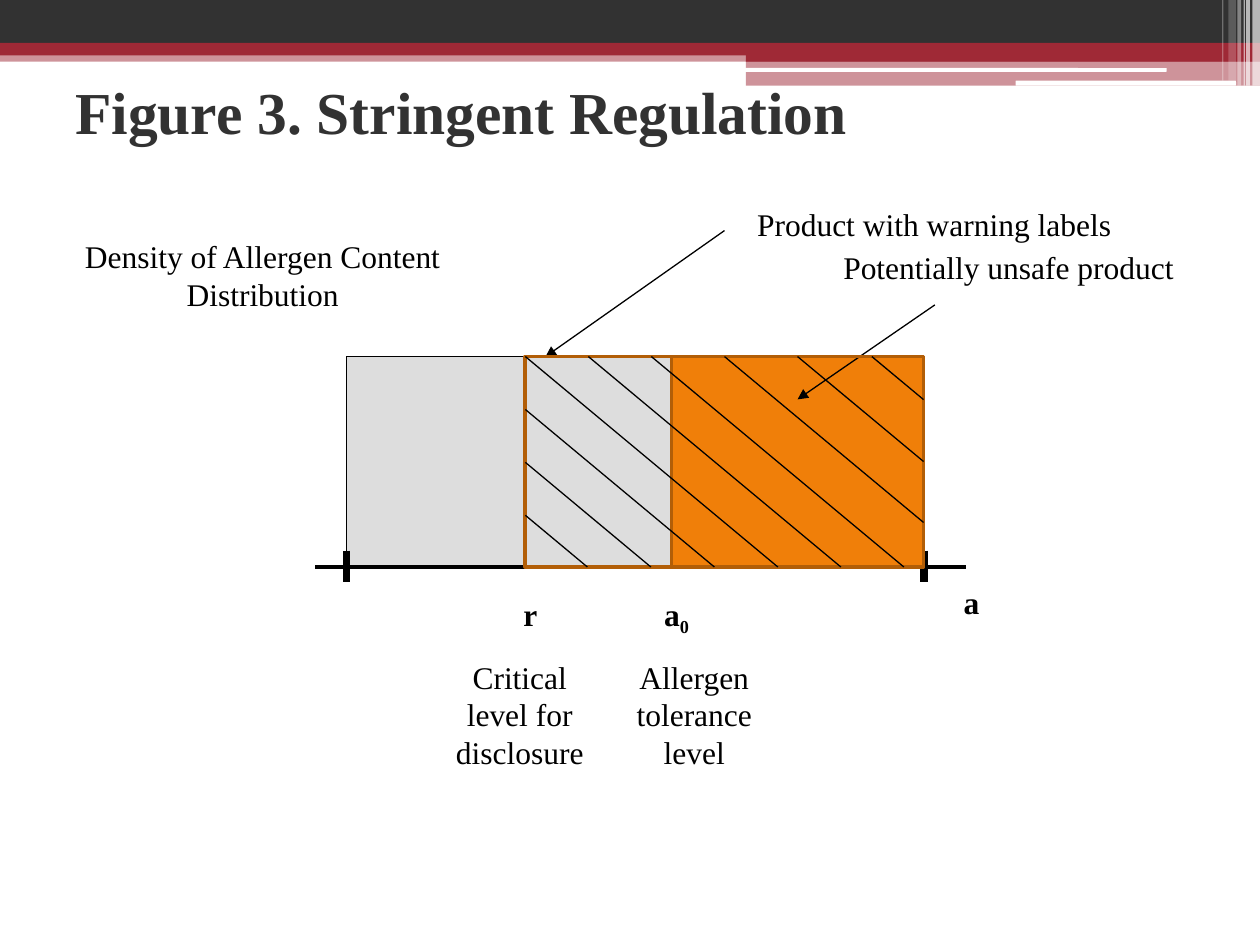
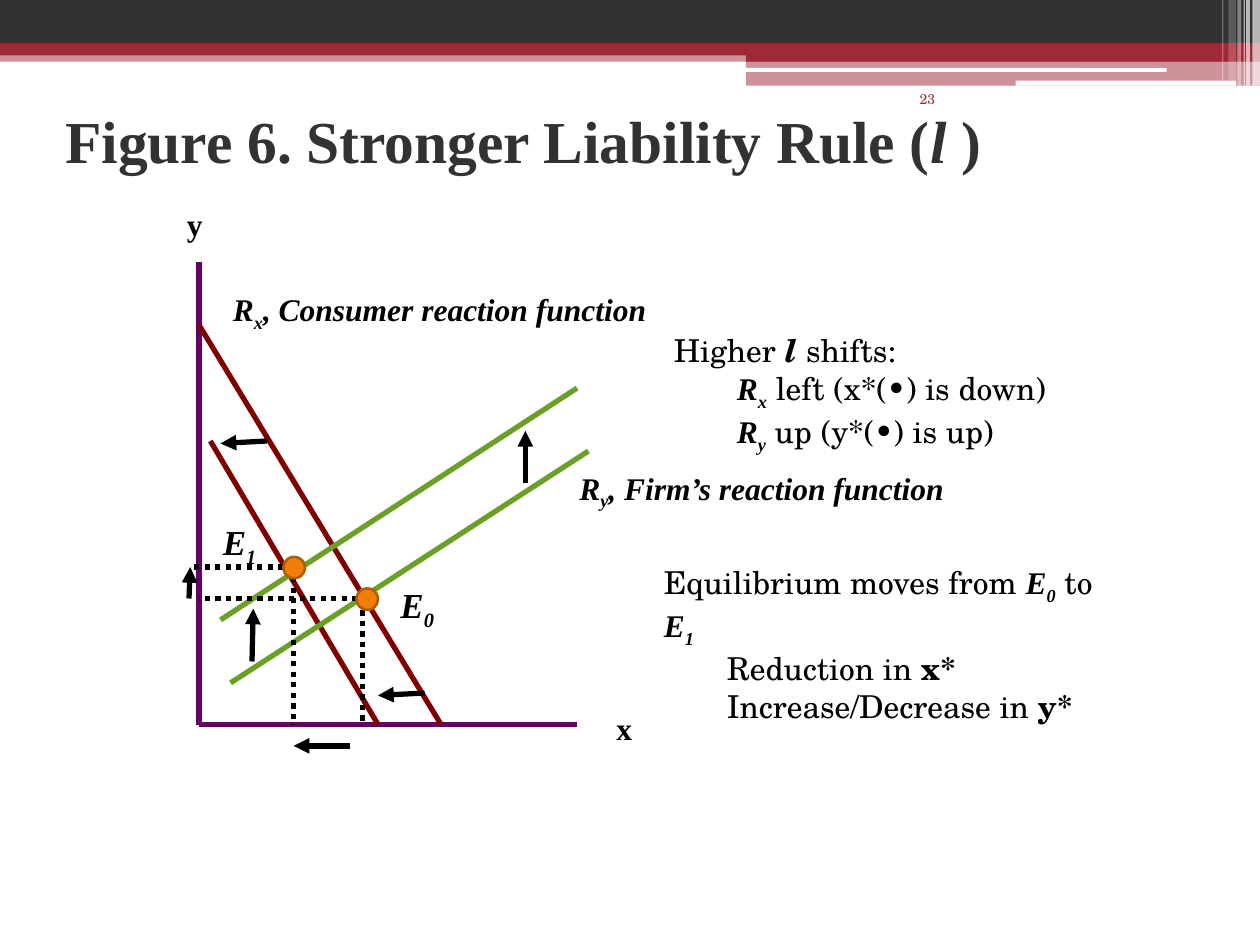
from lxml import etree
from pptx import Presentation
from pptx.dml.color import RGBColor
from pptx.enum.dml import MSO_LINE
from pptx.enum.shapes import MSO_CONNECTOR, MSO_SHAPE
from pptx.enum.text import MSO_ANCHOR, PP_ALIGN
from pptx.oxml.ns import qn
from pptx.util import Inches, Pt

RECTANGLE, ROUNDED, OVAL = MSO_SHAPE.RECTANGLE, MSO_SHAPE.ROUNDED_RECTANGLE, MSO_SHAPE.OVAL
STRAIGHT, DOTTED = MSO_CONNECTOR.STRAIGHT, MSO_LINE.ROUND_DOT
LEFT, CENTER = PP_ALIGN.LEFT, PP_ALIGN.CENTER
TITLE_ONLY = 5

SERIF, SCHOOLBOOK = "Times New Roman", "TeX Gyre Schola"
BLACK, WHITE, CHARCOAL, RED = "000000", "FFFFFF", "323232", "9F2936"
GRAY, ORANGE, BROWN = "DDDDDD", "F07F09", "B25E07"
PURPLE, MAROON, GREEN = "660066", "800000", "6B9F25"

# Header bands: left, top, width, height, colour, opacity in percent
BANDS = [
    (0, 0.4, 10, 0.09, RED, 50),
    (0, 0, 10, 0.34, CHARCOAL, 100),
    (0, 0.34, 10, 0.1, RED, 100),
    (5.92, 0.39, 4.08, 0.1, RED, 100),
    (5.92, 0.48, 4.08, 0.2, RED, 50),
]
HEADER_RULES = [(5.91, 0.54, 3.35, 0.03, WHITE, 100), (8.06, 0.64, 1.75, 0.04, WHITE, 100)]
# Stripes at the right end of the header: left, width, height, opacity
STRIPES = [
    (9.94, 0.06, 0.68, 65), (9.89, 0.03, 0.68, 65), (9.87, 0.01, 0.68, 60),
    (9.82, 0.03, 0.68, 40), (9.75, 0.06, 0.64, 20), (9.7, 0.01, 0.64, 30),
]

# Text is a list of paragraphs, each a list of (text, style) runs.
# Style letters: b bold, i italic, _ subscript, s schoolbook font.
REGULATION_TITLE = (0.5, 0.42), [("Figure 3. Stringent Regulation", "b")]
LIABILITY_TITLE = (0.42, 0.65), [
    ("Figure 6. Stronger Liability Rule (", "b"), ("l ", "bi"), (")", "b")]

# Density rectangle and the levels that divide it
ZERO, DISCLOSURE, TOLERANCE, MAXIMUM = 2.75, 4.17, 5.33, 7.33
DENSITY_TOP, DENSITY_BASE = 2.83, 4.5
HATCH_RUN_PER_RISE = 1.2
HATCH_LEFT_STARTS = [DENSITY_TOP + step * 0.42 for step in range(4)]
HATCH_TOP_STARTS = [4.67, 5.17, 5.75, 6.33, 6.92]

# Labels: left, top, width, paragraphs
REGULATION_LABELS = [
    (3.92, 4.67, 0.58, [[("r", "b")]]),
    (5.08, 4.67, 0.58, [[("a", "b"), ("0", "b_")]]),
    (7.5, 4.58, 0.42, [[("a", "b")]]),
    (3.5, 5.17, 1.25, [[("Critical level for disclosure", "")]]),
    (4.92, 5.17, 1.18, [[("Allergen tolerance level", "")]]),
    (0.5, 1.83, 3.17, [[("Density of Allergen Content Distribution", "")]]),
    (5.83, 1.58, 3.17, [[("Product with warning labels", "")]]),
    (6.42, 1.92, 3.17, [[("Potentially unsafe product", "")]]),
]
REGULATION_POINTERS = [(5.75, 1.83, 4.33, 2.83), (7.42, 2.42, 6.33, 3.17)]

AXIS_X, AXIS_Y = 1.58, 5.75
AXES = [(AXIS_X, 2.08, AXIS_X, AXIS_Y), (AXIS_X, AXIS_Y, 4.58, AXIS_Y)]
CONSUMER_CURVES = [(AXIS_X, 2.58, 3.5, AXIS_Y), (1.67, 3.5, 3, AXIS_Y)]
FIRM_CURVES = [(1.83, 5.42, 4.67, 3.58), (1.75, 4.92, 4.58, 3.08)]
GUIDES = [
    (2.88, 4.76, 2.88, AXIS_Y), (2.92, 4.75, AXIS_X, 4.75),
    (2.25, 4.5, 1.5, 4.5), (2.33, 4.58, 2.33, AXIS_Y),
]
SHIFT_ARROWS = [
    (2, 5.25, 2.01, 4.83), (2.12, 3.5, 1.75, 3.52), (3.37, 5.5, 3, 5.52),
    (4.17, 3.83, 4.17, 3.42), (2.78, 5.92, 2.33, 5.92), (1.5, 4.75, 1.51, 4.5),
]
EQUILIBRIA = [(2.83, 4.67), (2.25, 4.42)]
EQUILIBRIUM_SIZE = 0.17

# Labels: left, top, width, size, alignment, paragraphs
LIABILITY_LABELS = [
    (1.17, 1.58, 0.75, 18, CENTER, [[("y", "b")]]),
    (4.58, 5.58, 0.75, 18, CENTER, [[("x", "b")]]),
    (1.75, 2.25, 4.17, 18, LEFT,
     [[("R", "bi"), ("x", "bi_"), (", Consumer reaction function", "bi")]]),
    (4.5, 3.67, 3.17, 18, LEFT,
     [[("R", "bi"), ("y", "bi_"), (", Firm’s reaction function", "bi")]]),
    (3.08, 4.58, 0.67, 20, LEFT, [[("E", "bi"), ("0", "bi_")]]),
    (1.67, 4.08, 0.67, 20, LEFT, [[("E", "bi"), ("1", "bi_")]]),
]
# Notes: the paragraphs after the first are indented
LIABILITY_NOTES = [
    (5.25, 2.58, 4.25, [
        [("Higher ", "s"), ("l ", "sbi"), ("shifts:", "s")],
        [("R", "bi"), ("x", "bi_"), (" left (x*(•) is down)", "s")],
        [("R", "bi"), ("y", "bi_"), (" up (y*(•) is up)", "s")],
    ]),
    (5.17, 4.42, 3.84, [
        [("Equilibrium moves from ", "s"), ("E", "bi"), ("0", "bi_"),
         (" to ", "s"), ("E", "bi"), ("1", "bi_")],
        [("Reduction in ", "s"), ("x*", "sb")],
        [("Increase/Decrease in ", "s"), ("y*", "sb")],
    ]),
]
PAGE_NUMBER = "23"


def color(hex_string):
    return RGBColor.from_string(hex_string)


def add_block(slide, kind, box, fill=None, outline=None, width=0, opacity=100):
    shape = slide.shapes.add_shape(kind, *map(Inches, box))
    shape.shadow.inherit = False
    if fill:
        shape.fill.solid()
        shape.fill.fore_color.rgb = color(fill)
    else:
        shape.fill.background()
    if opacity < 100:
        fill_color = shape.element.spPr.find(".//" + qn("a:srgbClr"))
        etree.SubElement(fill_color, qn("a:alpha")).set("val", str(opacity * 1000))
    if outline:
        shape.line.color.rgb = color(outline)
        shape.line.width = Pt(width)
    else:
        shape.line.fill.background()
    return shape


def add_line(slide, ends, stroke=BLACK, width=0.75, arrow=False, dotted=False):
    connector = slide.shapes.add_connector(STRAIGHT, *map(Inches, ends))
    connector.line.color.rgb = color(stroke)
    connector.line.width = Pt(width)
    if dotted:
        connector.line.dash_style = DOTTED
    if arrow:
        etree.SubElement(connector.get_or_add_ln(), qn("a:tailEnd")).set("type", "triangle")
    etree.SubElement(connector.element.spPr, qn("a:effectLst"))


def add_runs(paragraph, runs, size, ink):
    for text, style in runs:
        run = paragraph.add_run()
        run.text = text
        font = run.font
        font.name = SCHOOLBOOK if "s" in style else SERIF
        font.size = Pt(size)
        font.bold = "b" in style
        font.italic = "i" in style
        font.color.rgb = color(ink)
        if "_" in style:
            run._r.get_or_add_rPr().set("baseline", "-25000")


def add_text(slide, left, top, width, paragraphs, size=18, alignment=CENTER, ink=BLACK):
    """Add a text box whose paragraphs after the first are indented."""
    box = slide.shapes.add_textbox(*map(Inches, (left, top, width, 0.4)))
    frame = box.text_frame
    frame.word_wrap = True
    for index, runs in enumerate(paragraphs):
        paragraph = frame.add_paragraph() if index else frame.paragraphs[0]
        paragraph.alignment = alignment
        if index:
            paragraph.level = 1
            properties = paragraph._p.get_or_add_pPr()
            properties.set("marL", str(Inches(0.5)))
            properties.set("indent", "0")
        add_runs(paragraph, runs, size, ink)


def add_titled_slide(presentation, title):
    (left, top), runs = title
    slide = presentation.slides.add_slide(presentation.slide_layouts[TITLE_ONLY])
    shape = slide.shapes.title
    shape.left, shape.top, shape.width, shape.height = map(Inches, (left, top, 8.5, 0.92))
    shape.text_frame.vertical_anchor = MSO_ANCHOR.MIDDLE
    paragraph = shape.text_frame.paragraphs[0]
    paragraph.alignment = LEFT
    add_runs(paragraph, runs, 34, CHARCOAL)
    return slide


def move_header_to_layout(slide):
    """Draw the header once and hand it to the layout that all slides share."""
    layout = slide.slide_layout
    for placeholder in list(layout.placeholders):
        if placeholder.placeholder_format.idx:
            placeholder.element.getparent().remove(placeholder.element)
    stripes = [(left, 0, width, height, WHITE, opacity)
               for left, width, height, opacity in STRIPES]
    header = []
    for kind, parts in ((RECTANGLE, BANDS), (ROUNDED, HEADER_RULES), (RECTANGLE, stripes)):
        for *box, fill, opacity in parts:
            header.append(add_block(slide, kind, box, fill, opacity=opacity))
    for shape in header:
        layout.shapes.element.append(shape.element)


def draw_regulation(slide):
    height = DENSITY_BASE - DENSITY_TOP

    def span(left):
        return left, DENSITY_TOP, MAXIMUM - left, height

    add_block(slide, RECTANGLE, span(ZERO), GRAY, BLACK, 0.75)
    add_line(slide, (2.5, DENSITY_BASE, 7.67, DENSITY_BASE), width=2)
    for x in (ZERO, MAXIMUM):
        add_line(slide, (x, 4.37, x, 4.62), width=4.5)
    add_block(slide, RECTANGLE, span(TOLERANCE), ORANGE, BROWN, 1.5)
    for pointer in REGULATION_POINTERS:
        add_line(slide, pointer, arrow=True)
    add_block(slide, RECTANGLE, span(DISCLOSURE), outline=BROWN, width=2.25)

    starts = [(DISCLOSURE, y) for y in HATCH_LEFT_STARTS]
    starts += [(x, DENSITY_TOP) for x in HATCH_TOP_STARTS]
    for x, y in starts:
        run = min(MAXIMUM - x, (DENSITY_BASE - y) * HATCH_RUN_PER_RISE)
        add_line(slide, (x, y, x + run, y + run / HATCH_RUN_PER_RISE))
    for label in REGULATION_LABELS:
        add_text(slide, *label)


def draw_liability(slide):
    for stroke, lines in ((PURPLE, AXES), (MAROON, CONSUMER_CURVES), (GREEN, FIRM_CURVES)):
        for ends in lines:
            add_line(slide, ends, stroke, 3)
    for ends in GUIDES:
        add_line(slide, ends, width=3, dotted=True)
    for ends in SHIFT_ARROWS:
        add_line(slide, ends, width=3, arrow=True)
    for left, top in EQUILIBRIA:
        box = (left, top, EQUILIBRIUM_SIZE, EQUILIBRIUM_SIZE)
        add_block(slide, OVAL, box, ORANGE, BROWN, 1.5)
    for left, top, width, size, alignment, paragraphs in LIABILITY_LABELS:
        add_text(slide, left, top, width, paragraphs, size, alignment)
    for note in LIABILITY_NOTES:
        add_text(slide, *note, alignment=LEFT)
    add_text(slide, 7.2, 0.67, 1.05, [[(PAGE_NUMBER, "s")]], 8, LEFT, RED)


def main():
    presentation = Presentation()
    presentation.slide_width, presentation.slide_height = Inches(10), Inches(7.5)
    regulation = add_titled_slide(presentation, REGULATION_TITLE)
    move_header_to_layout(regulation)
    draw_regulation(regulation)
    draw_liability(add_titled_slide(presentation, LIABILITY_TITLE))
    presentation.save("out.pptx")


if __name__ == "__main__":
    main()
